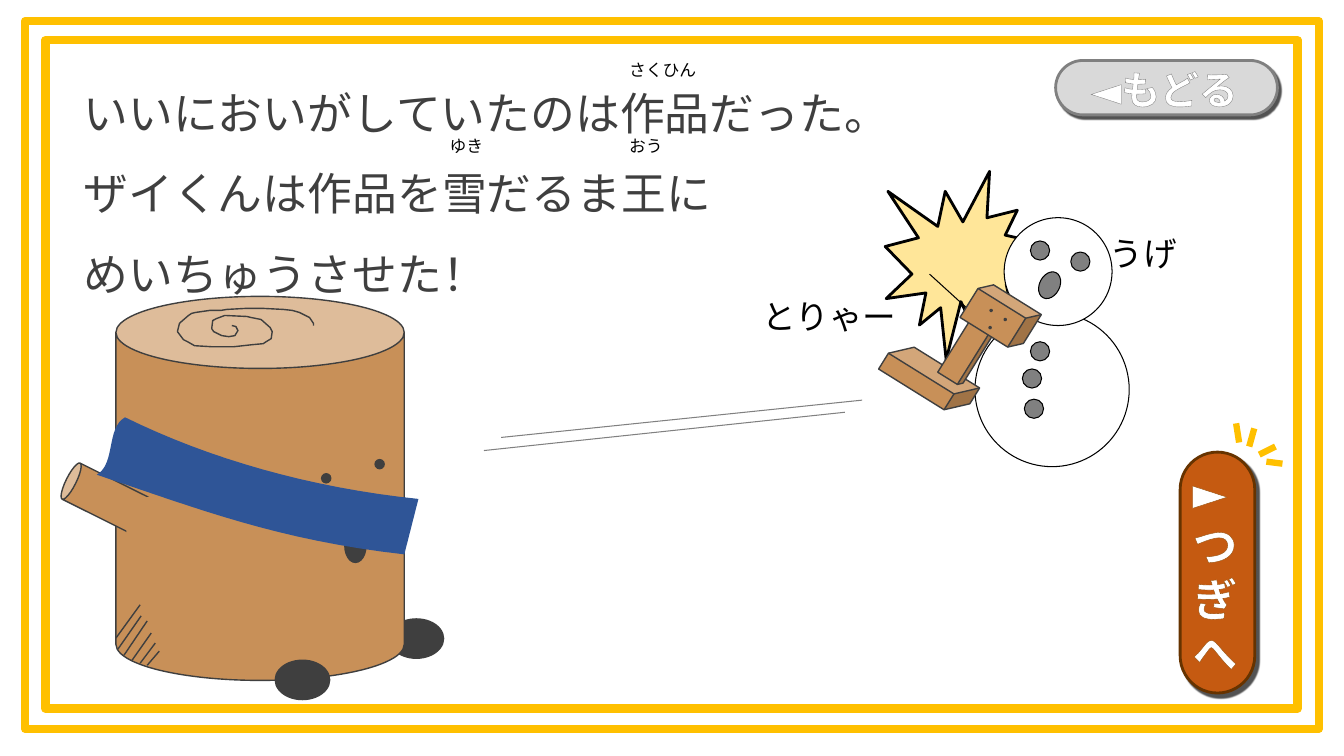
from dataclasses import dataclass
from typing import Any

from lxml import etree
from pptx import Presentation
from pptx import util as u
from pptx.dml.color import RGBColor
from pptx.enum import shapes, text
from pptx.oxml import ns

SHAPE = shapes.MSO_SHAPE


class Theme:
    """Colours, fonts and type sizes of the slide."""
    ink, black, white, grey, silver = "3F3F3F", "000000", "FFFFFF", "808080", "D9D9D9"
    gold, burst, wood, scarf = "FFC000", "FFE699", "C89058", "2F5597"
    orange, brown, next_outline = "C55A11", "663300", "8E4700"
    body_font, button_font = "Arial", "Noto Sans CJK JP"
    story, shout, ruby, back = 32, 24, 12, 28


def add_xml(parent, tag, **attributes):
    """Append a DrawingML element and return it."""
    return etree.SubElement(parent, ns.qn(tag), attributes)


def paint(item, fill=None, line=None, width=1):
    """Set fill and outline and take the shadow away."""
    item.shadow.inherit = False
    if fill:
        item.fill.solid()
        item.fill.fore_color.rgb = RGBColor.from_string(fill)
    else:
        item.fill.background()
    if line:
        item.line.color.rgb = RGBColor.from_string(line)
        item.line.width = u.Pt(width)
    else:
        item.line.fill.background()


def drop_shadow(item):
    """Give a button its hard shadow."""
    effects = item._element.spPr.find(ns.qn("a:effectLst"))
    shadow = add_xml(effects, "a:outerShdw", blurRad=str(u.Pt(1)), dist=str(u.Pt(3)),
                     dir="3000000", algn="tl", rotWithShape="0")
    color = add_xml(shadow, "a:srgbClr", val=Theme.black)
    add_xml(color, "a:alpha", val="68000")


def outline_text(span, color, width):
    """Draw a contour around the letters of a run."""
    properties = span.font._element
    contour = etree.Element(ns.qn("a:ln"), w=str(u.Pt(width)))
    add_xml(add_xml(contour, "a:solidFill"), "a:srgbClr", val=color)
    properties.insert(0, contour)


def bezier(points, steps=16):
    """Sample a chain of cubic curves given as start, handle, handle, end and so on."""
    samples = [points[0]]
    for first in range(0, len(points) - 1, 3):
        a, b, c, d = points[first:first + 4]
        for step in range(1, steps + 1):
            t = step / steps
            s = 1 - t
            samples.append(tuple(s**3 * a[i] + 3 * s * s * t * b[i] + 3 * s * t * t * c[i]
                                 + t**3 * d[i] for i in (0, 1)))
    return samples


@dataclass
class Box:
    """A region that places its pieces relative to its top left corner."""
    canvas: Any
    left: float
    top: float

    def at(self, x, y):
        return u.Inches(self.left + x), u.Inches(self.top + y)

    def shape(self, kind, x, y, width, height, fill=None, line=None, weight=1, turn=0, adjust=None):
        item = self.canvas.add_shape(kind, *self.at(x, y), u.Inches(width), u.Inches(height))
        item.rotation = turn
        if adjust is not None:
            item.adjustments[0] = adjust
        paint(item, fill, line, weight)
        return item

    def line(self, start, end, color, weight):
        item = self.canvas.add_connector(shapes.MSO_CONNECTOR.STRAIGHT, *self.at(*start), *self.at(*end))
        item.line.color.rgb = RGBColor.from_string(color)
        item.line.width = u.Pt(weight)
        add_xml(item._element.spPr, "a:effectLst")

    def outline(self, points, close, fill=None, line=None):
        corners = [self.at(*point) for point in points]
        builder = self.canvas.build_freeform(*corners[0])
        builder.add_line_segments(corners[1:], close=close)
        paint(builder.convert_to_shape(), fill, line)

    def text(self, words, x, y, width, height, size, color=Theme.black, font=Theme.body_font,
             spacing=None):
        item = self.canvas.add_textbox(*self.at(x, y), u.Inches(width), u.Inches(height))
        frame = item.text_frame
        frame.word_wrap = True
        frame.auto_size = text.MSO_AUTO_SIZE.SHAPE_TO_FIT_TEXT
        frame.text = words
        for para in frame.paragraphs:
            para.line_spacing = spacing
            for span in para.runs:
                style_run(span, size, color, font)
        return frame


def style_run(span, size, color, font):
    """Set size, colour and typeface of a run."""
    span.font.size = u.Pt(size)
    span.font.color.rgb = RGBColor.from_string(color)
    span.font.name = font
    if font == Theme.button_font:
        span.font.bold = True
        add_xml(span.font._element, "a:ea", typeface=font)


def draw_frame(box):
    """Draw the double golden border."""
    for x, y, width, height in ((0, 0, 12.83, 7.02), (0.2, 0.19, 12.42, 6.63)):
        box.shape(SHAPE.RECTANGLE, x, y, width, height, line=Theme.gold, weight=6)


def draw_log(box):
    """Draw the log character with feet, bark, arm and scarf."""
    ink, wood = Theme.ink, Theme.wood
    box.shape(SHAPE.OVAL, 2.86, 3.14, 0.54, 0.39, ink, ink)
    box.shape(SHAPE.CAN, 0.15, -0.06, 2.86, 3.81, wood, ink, adjust=0.25)
    box.shape(SHAPE.OVAL, 2.42, 2.25, 0.21, 0.33, ink, ink)
    box.shape(SHAPE.OVAL, 1.73, 3.55, 0.54, 0.39, ink, ink)
    hatches = [((0.39, 3), (0.15, 3.33)), ((0.4, 3.11), (0.17, 3.44)), ((0.46, 3.16), (0.23, 3.5)),
               ((0.5, 3.28), (0.31, 3.55)), ((0.54, 3.38), (0.39, 3.58)), ((0.58, 3.46), (0.46, 3.6))]
    for start, end in hatches:
        box.line(start, end, ink, 1)
    ring = [(1.3, 0.23), (1.34, 0.24), (1.36, 0.28), (1.33, 0.33), (1.27, 0.34), (1.2, 0.33),
            (1.12, 0.29), (1.1, 0.26), (1.11, 0.18), (1.15, 0.16), (1.23, 0.13), (1.45, 0.14),
            (1.49, 0.15), (1.59, 0.17), (1.68, 0.25), (1.7, 0.29), (1.69, 0.36), (1.64, 0.39),
            (1.61, 0.41), (1.5, 0.42), (1.32, 0.44), (1.1, 0.44), (0.93, 0.43), (0.86, 0.39),
            (0.82, 0.37), (0.76, 0.29), (0.78, 0.21), (0.8, 0.19), (0.87, 0.13), (0.9, 0.11),
            (0.94, 0.1), (1.08, 0.08), (1.19, 0.08), (1.25, 0.07), (1.43, 0.06), (1.62, 0.06),
            (1.81, 0.07), (1.9, 0.08), (1.97, 0.1), (2.07, 0.15), (2.11, 0.21), (2.11, 0.23)]
    box.outline(ring, False, line=ink)
    box.shape(SHAPE.CAN, -0.15, 1.51, 0.4, 0.87, wood, ink, turn=296.5, adjust=0.25)
    box.shape(SHAPE.OVAL, 0.18, 2, 0.54, 0.34, wood, turn=118.1)
    for x, y in ((2.19, 1.7), (2.72, 1.56)):
        box.shape(SHAPE.OVAL, x, y, 0.09, 0.09, ink, ink)
    scarf = [(3.01, 2.5), (1.76, 2.36), (0.97, 2.05), (-0.04, 1.71), (0.15, 1.6), (0.05, 1.25),
             (0.24, 1.14), (1.07, 1.55), (2.08, 1.84), (3.15, 1.95)]
    box.outline(bezier(scarf), True, fill=Theme.scarf)


def draw_snowman(box):
    """Draw the snowman king."""
    for x, y, size in ((0.07, 1.1, 1.53), (0.36, 0.16, 1.07)):
        box.shape(SHAPE.OVAL, x, y, size, size, Theme.white, Theme.black, 0.75)
    for x, y in ((0.62, 1.39), (0.56, 1.96), (0.54, 1.66), (0.62, 0.39), (1.02, 0.5)):
        box.shape(SHAPE.OVAL, x, y, 0.19, 0.19, Theme.grey, Theme.black, 0.75)
    box.shape(SHAPE.OVAL, 0.71, 0.69, 0.2, 0.28, Theme.grey, Theme.black, 0.75, turn=27)


def draw_hammer(box):
    """Draw the wooden work that hits the snowman."""
    blocks = [(-0.26, 0.57, 0.95, 0.37, 0.5), (0.51, -0.04, 0.27, 0.87, 0.15),
              (0.59, -0.09, 0.67, 0.45, 0.25)]
    for x, y, width, height, depth in blocks:
        box.shape(SHAPE.CUBE, x, y, width, height, Theme.wood, Theme.ink, turn=31.9, adjust=depth)
    for x, y in ((0.82, 0.07), (0.96, 0.16), (0.81, 0.24)):
        box.shape(SHAPE.OVAL, x, y, 0.02, 0.02, Theme.ink, Theme.ink)


def write_story(box):
    """Write the story with its reading aids."""
    story = "いいにおいがしていたのは作品だった。\nザイくんは作品を雪だるま王に\nめいちゅうさせた！"
    box.text(story, 0.03, 0.03, 8.65, 2.52, Theme.story, Theme.ink, spacing=1.5)
    for reading, x, y in (("さくひん", 5.44, 0.04), ("ゆき", 3.66, 0.8), ("おう", 5.44, 0.8)):
        box.text(reading, x, y, 0.91, 0.3, Theme.ruby)


def draw_next_button(box):
    """Draw the upright button to the next page with its sparkles."""
    button = box.shape(SHAPE.ROUNDED_RECTANGLE, -0.12, 1.31, 2.39, 0.74, Theme.orange, Theme.brown,
                       2, turn=270, adjust=0.5)
    drop_shadow(button)
    frame = box.text("►つぎへ", 0.73, 0.43, 0.73, 2.48, Theme.story, Theme.white, Theme.button_font)
    frame.vertical_anchor = text.MSO_ANCHOR.MIDDLE
    frame._txBody.bodyPr.set("vert", "wordArtVertRtl")
    outline_text(frame.paragraphs[0].runs[0], Theme.next_outline, 1)
    for start, end in (((1.26, 0.2), (1.29, 0.39)), ((1.44, 0.25), (1.39, 0.43)),
                       ((1.72, 0.6), (1.56, 0.58)), ((1.65, 0.43), (1.49, 0.51))):
        box.line(start, end, Theme.gold, 4.5)


def draw_back_button(box):
    """Draw the button to the previous page."""
    button = box.shape(SHAPE.ROUNDED_RECTANGLE, 0.02, 0, 2.2, 0.54, Theme.silver, Theme.grey, 2,
                       adjust=0.5)
    drop_shadow(button)
    para = box.text("◄", 0, 0, 2.2, 0.57, Theme.back, Theme.white, Theme.button_font).paragraphs[0]
    para.alignment = text.PP_ALIGN.CENTER
    label = para.add_run()
    label.text = "もどる"
    style_run(label, Theme.back, Theme.white, Theme.button_font)
    for span, width in zip(para.runs, (1, 1.5)):
        outline_text(span, Theme.grey, width)


def main():
    """Build the story page and save the deck."""
    deck = Presentation()
    deck.slide_width, deck.slide_height = u.Inches(13.33), u.Inches(7.5)
    page = deck.slides.add_slide(deck.slide_layouts[6])
    scene = Box(page.shapes, 0, 0)
    scene.shape(SHAPE.EXPLOSION1, 8.78, 1.7, 1.54, 1.87, Theme.burst, Theme.black, 2)
    draw_frame(Box(page.shapes, 0.25, 0.21))
    draw_log(Box(page.shapes.add_group_shape().shapes, 1, 3))
    draw_snowman(Box(page.shapes, 9.6, 2))
    scene.line((9.89, 3.33), (9.22, 2.72), Theme.black, 0.75)
    write_story(Box(page.shapes, 0.7, 0.5))
    for start, end in (((4.97, 4.34), (8.55, 3.97)), ((4.8, 4.47), (8.38, 4.09))):
        scene.line(start, end, Theme.grey, 0.75)
    draw_hammer(Box(page.shapes.add_group_shape().shapes, 9, 3))
    scene.text("うげ", 10.91, 2.26, 1.28, 0.5, Theme.shout)
    scene.text("とりゃー", 7.46, 2.89, 2.07, 0.5, Theme.shout)
    draw_next_button(Box(page.shapes, 11, 4))
    draw_back_button(Box(page.shapes, 10.45, 0.6))
    deck.save("out.pptx")


if __name__ == "__main__":
    main()
